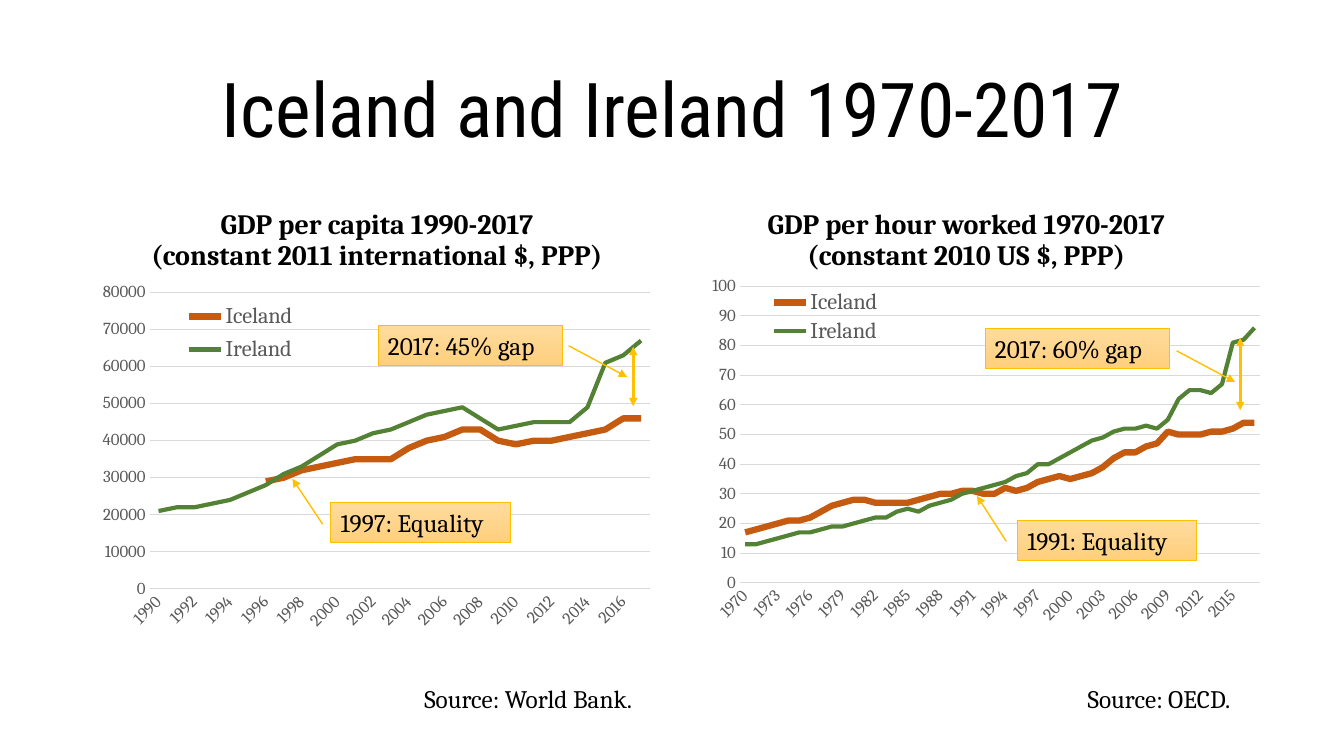
from lxml.etree import SubElement
from pptx import Presentation
from pptx.chart.data import CategoryChartData
from pptx.dml.color import RGBColor
from pptx.enum.chart import XL_CHART_TYPE, XL_LEGEND_POSITION, XL_MARKER_STYLE, XL_TICK_MARK
from pptx.enum.shapes import MSO_CONNECTOR, MSO_SHAPE
from pptx.enum.text import MSO_ANCHOR, PP_ALIGN
from pptx.oxml import parse_xml
from pptx.oxml.ns import nsdecls, qn
from pptx.util import Inches, Pt


def color(value):
    return RGBColor.from_string(value)


class SlideBuilder:
    title_font = "Roboto Condensed"
    body_font = "Cambria"
    text_color = "000000"
    axis_color = "595959"
    grid_color = "D9D9D9"
    accent = "FFC000"
    callout_gradient = ("FFDB9E", "FFD07C")
    series_styles = (("C55A11", 4.5), ("548235", 3))

    def __init__(self, presentation):
        self.slide = presentation.slides.add_slide(presentation.slide_layouts[5])

    def place(self, shape, left, top, width, height):
        shape.left, shape.top = Inches(left), Inches(top)
        shape.width, shape.height = Inches(width), Inches(height)

    def style_font(self, font, size, name=None, value=None, bold=False):
        font.name = name or self.body_font
        font.size = Pt(size)
        font.bold = bold
        font.color.rgb = color(value or self.text_color)

    def style_line(self, line, value, width):
        line.color.rgb = color(value)
        line.width = Pt(width)

    def set_text(self, shape, text, size, name=None, bold=False,
                 alignment=PP_ALIGN.LEFT, anchor=MSO_ANCHOR.TOP, spacing=1.0):
        frame = shape.text_frame
        frame.word_wrap = True
        frame.vertical_anchor = anchor
        paragraph = frame.paragraphs[0]
        paragraph.text = text
        paragraph.alignment = alignment
        paragraph.line_spacing = spacing
        self.style_font(paragraph.font, size, name, bold=bold)

    def title(self, text, *box):
        shape = self.slide.shapes.title
        self.place(shape, *box)
        self.set_text(shape, text, 54, self.title_font, alignment=PP_ALIGN.CENTER,
                      anchor=MSO_ANCHOR.MIDDLE, spacing=0.9)

    def text(self, text, *box, size=18, **style):
        shape = self.slide.shapes.add_textbox(*map(Inches, box))
        self.set_text(shape, text, size, **style)

    def heading(self, text, *box):
        self.text(text, *box, size=20, bold=True, alignment=PP_ALIGN.CENTER,
                  anchor=MSO_ANCHOR.BOTTOM, spacing=0.9)

    def callout(self, text, *box):
        shape = self.slide.shapes.add_shape(MSO_SHAPE.RECTANGLE, *map(Inches, box))
        shape.shadow.inherit = False
        shape.fill.gradient()
        shape.fill.gradient_angle = 270
        for stop, value in zip(shape.fill.gradient_stops, self.callout_gradient):
            stop.color.rgb = color(value)
        self.style_line(shape.line, self.accent, 0.5)
        self.set_text(shape, text, 18)

    def arrow(self, *ends, width=1, double=False):
        connector = self.slide.shapes.add_connector(
            MSO_CONNECTOR.STRAIGHT, *map(Inches, ends))
        self.style_line(connector.line, self.accent, width)
        properties = connector._element.spPr
        line = properties.find(qn("a:ln"))
        for tag in ("a:headEnd", "a:tailEnd") if double else ("a:tailEnd",):
            SubElement(line, qn(tag), type="triangle")
        SubElement(properties, qn("a:effectLst"))

    def layout(self, left, top, width, height, inner=False):
        target = '<c:layoutTarget val="inner"/>' if inner else ""
        sizes = zip("xywh", (left, top, width, height))
        return parse_xml(
            f'<c:layout {nsdecls("c")}><c:manualLayout>{target}'
            '<c:xMode val="edge"/><c:yMode val="edge"/>'
            + "".join(f'<c:{key} val="{size}"/>' for key, size in sizes)
            + "</c:manualLayout></c:layout>")

    def line_chart(self, box, first_year, iceland, ireland, maximum, step,
                   label_step, number_format, plot_layout, legend_layout):
        data = CategoryChartData(number_format=number_format)
        data.categories = [str(first_year + index) for index in range(len(ireland))]
        data.add_series("Iceland", iceland)
        data.add_series("Ireland", ireland)
        chart = self.slide.shapes.add_chart(
            XL_CHART_TYPE.LINE, *map(Inches, box), data).chart
        self.style_font(chart.font, 10, "Calibri")
        chart.has_title = False
        chart.plots[0].vary_by_categories = False
        for series, (value, width) in zip(chart.plots[0].series, self.series_styles):
            series.smooth = False
            series.marker.style = XL_MARKER_STYLE.NONE
            self.style_line(series.format.line, value, width)

        for axis in (chart.category_axis, chart.value_axis):
            axis.major_tick_mark = axis.minor_tick_mark = XL_TICK_MARK.NONE
            self.style_font(axis.tick_labels.font, 12, value=self.axis_color)
        categories, values = chart.category_axis, chart.value_axis
        self.style_line(categories.format.line, self.grid_color, 0.75)
        categories._element.find(qn("c:txPr")).find(qn("a:bodyPr")).set("rot", "-2700000")
        skip = parse_xml(f'<c:tickLblSkip {nsdecls("c")} val="{label_step}"/>')
        categories._element.find(qn("c:noMultiLvlLbl")).addprevious(skip)
        values.minimum_scale, values.maximum_scale = 0, maximum
        values.major_unit = step
        values.tick_labels.number_format = number_format
        values.tick_labels.number_format_is_linked = False
        values.format.line.fill.background()
        self.style_line(values.major_gridlines.format.line, self.grid_color, 0.75)

        chart.has_legend = True
        legend = chart.legend
        legend.position = XL_LEGEND_POSITION.BOTTOM
        legend.include_in_layout = True
        self.style_font(legend.font, 16, value=self.axis_color)
        for old_layout in legend._element.findall(qn("c:layout")):
            legend._element.remove(old_layout)
        legend._element.find(qn("c:legendPos")).addnext(self.layout(*legend_layout))
        plot_area = chart._chartSpace.chart.plotArea
        for old_layout in plot_area.findall(qn("c:layout")):
            plot_area.remove(old_layout)
        plot_area.insert(0, self.layout(*plot_layout, inner=True))


CAPITA_ICELAND = [None] * 6 + [1000 * value for value in (
    29, 30, 32, 33, 34, 35, 35, 35, 38, 40, 41,
    43, 43, 40, 39, 40, 40, 41, 42, 43, 46, 46)]
CAPITA_IRELAND = [1000 * value for value in (
    21, 22, 22, 23, 24, 26, 28, 31, 33, 36, 39, 40, 42, 43,
    45, 47, 48, 49, 46, 43, 44, 45, 45, 45, 49, 61, 63, 67)]
HOUR_ICELAND = [
    17, 18, 19, 20, 21, 21, 22, 24, 26, 27, 28, 28, 27, 27, 27, 27,
    28, 29, 30, 30, 31, 31, 30, 30, 32, 31, 32, 34, 35, 36, 35, 36,
    37, 39, 42, 44, 44, 46, 47, 51, 50, 50, 50, 51, 51, 52, 54, 54]
HOUR_IRELAND = [
    13, 13, 14, 15, 16, 17, 17, 18, 19, 19, 20, 21, 22, 22, 24, 25,
    24, 26, 27, 28, 30, 31, 32, 33, 34, 36, 37, 40, 40, 42, 44, 46,
    48, 49, 51, 52, 52, 53, 52, 55, 62, 65, 65, 64, 67, 81, 82, 86]


def main():
    presentation = Presentation()
    presentation.slide_width, presentation.slide_height = Inches(13.33), Inches(7.5)
    builder = SlideBuilder(presentation)
    builder.title("Iceland and Ireland 1970-2017", 0.92, 0.4, 11.5, 1.45)
    builder.heading("GDP per capita 1990-2017\n(constant 2011 international $, PPP)",
                    0.92, 1.84, 5.64, 0.9)
    builder.heading("GDP per hour worked 1970-2017\n(constant 2010 US $, PPP)",
                    6.75, 1.84, 5.67, 0.9)

    builder.line_chart((6.94, 2.68, 5.67, 4.03), 1970, HOUR_ICELAND, HOUR_IRELAND,
                       100, 10, 3, "#,##0",
                       (0.07, 0.04, 0.91, 0.73), (0.11, 0.04, 0.22, 0.15))
    builder.line_chart((0.92, 2.74, 5.64, 4.03), 1990, CAPITA_ICELAND, CAPITA_IRELAND,
                       80000, 10000, 2, "General",
                       (0.1, 0.04, 0.88, 0.73), (0.15, 0.05, 0.22, 0.18))

    builder.callout("1997: Equality", 3.28, 4.98, 1.78, 0.4)
    builder.callout("2017: 45% gap", 3.75, 3.23, 1.83, 0.4)
    builder.arrow(6.28, 3.44, 6.28, 4.03, width=2, double=True)
    builder.arrow(5.64, 3.43, 6.22, 3.74)
    builder.arrow(3.2, 5.2, 2.9, 4.75)

    builder.callout("1991: Equality", 10.09, 5.16, 1.78, 0.4)
    builder.arrow(9.98, 5.37, 9.69, 4.92)
    builder.callout("2017: 60% gap", 9.77, 3.26, 1.83, 0.4)
    builder.arrow(12.3, 3.35, 12.3, 4.07, width=2, double=True)
    builder.arrow(11.67, 3.48, 12.25, 3.79)

    builder.text("Source: World Bank.", 4.11, 6.73, 2.38, 0.4)
    builder.text("Source: OECD.", 10.69, 6.73, 1.94, 0.4)
    presentation.save("out.pptx")


if __name__ == "__main__":
    main()
